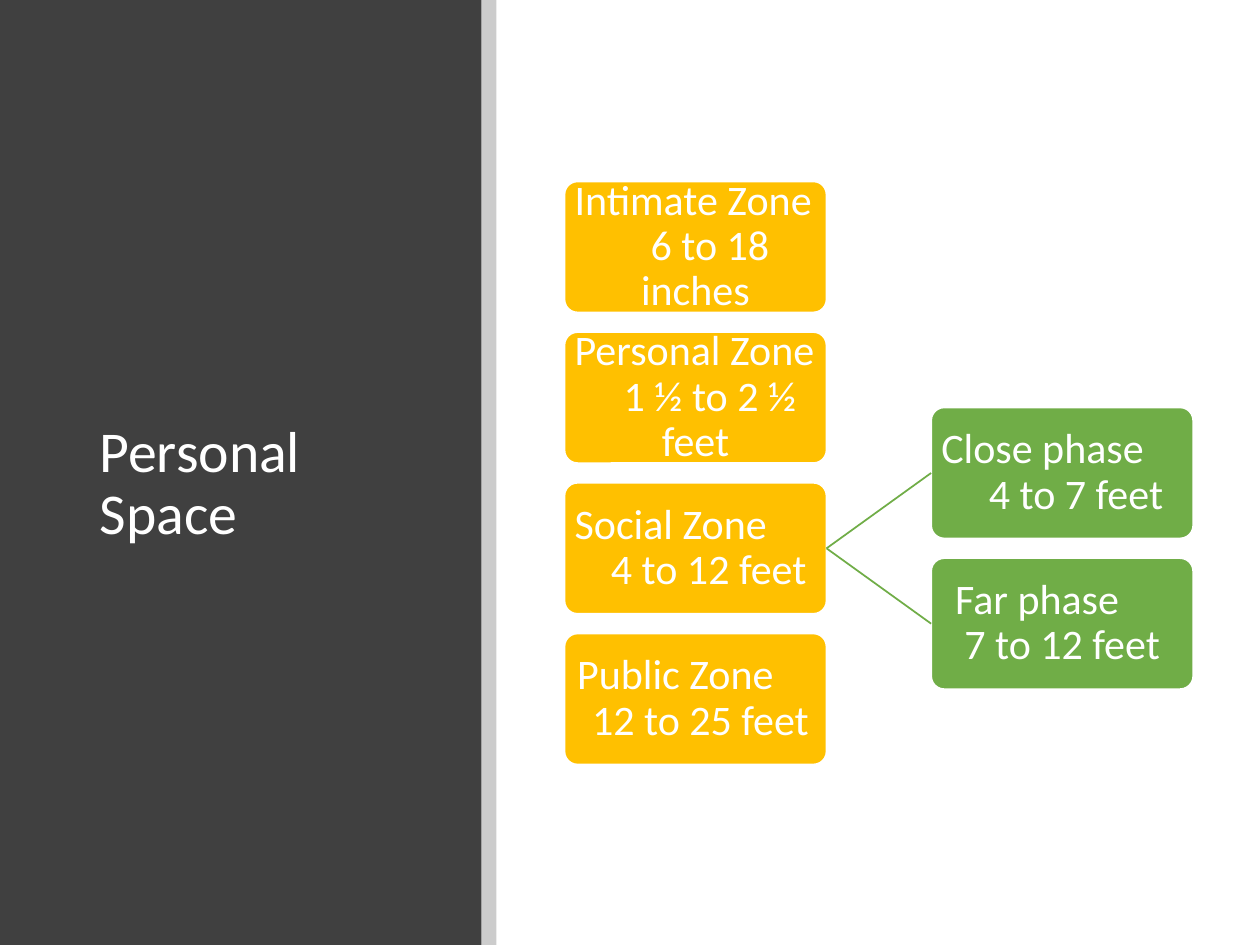
"""Build the Personal Space slide with its four zones and the two social phases."""
import dataclasses

import pptx
import pptx.dml.color
import pptx.enum.shapes
import pptx.enum.text
import pptx.oxml
import pptx.oxml.ns
import pptx.util
from pptx.util import Inches

FONT = "Calibri"
WHITE, GOLD, GREEN, CHARCOAL = "FFFFFF", "FFC000", "70AD47", "404040"
ZONE_LEFT, PHASE_LEFT, FIRST_TOP = 4.48, 7.39, 1.44
BOX_WIDTH, BOX_HEIGHT = 2.08, 1.04
ROW_PITCH = BOX_HEIGHT * 1.15
RIGHT_SIDE, LEFT_SIDE = 3, 1


@dataclasses.dataclass(frozen=True)
class Distance:
    name: str
    span: str
    row: float
    name_indent: float
    span_indent: float


ZONES = [
    Distance("Intimate Zone", "6 to 18 inches", 0, 0, 0.23),
    Distance("Personal Zone", "1 ½ to 2 ½ feet", 1, 0, 0.23),
    Distance("Social Zone", "4 to 12 feet", 2, 0, 0.21),
    Distance("Public Zone", "12 to 25 feet", 3, 0.02, 0.08),
]
PHASES = [
    Distance("Close phase", "4 to 7 feet", 1.5, 0, 0.22),
    Distance("Far phase", "7 to 12 feet", 2.5, 0.11, 0),
]


def rgb(color: str) -> pptx.dml.color.RGBColor:
    return pptx.dml.color.RGBColor.from_string(color)


def format_paragraph(paragraph, size: float, align, indent: float = 0) -> None:
    paragraph.alignment = align
    paragraph.line_spacing = 0.9
    paragraph.space_before = paragraph.space_after = pptx.util.Pt(0)
    properties = paragraph._p.get_or_add_pPr()
    properties.set("marL", "0")
    properties.set("indent", str(Inches(indent)))
    for run in paragraph.runs:
        run.font.name = FONT
        run.font.size = pptx.util.Pt(size)
        run.font.color.rgb = rgb(WHITE)


def add_panel(slide, left: float, width: float, color: str):
    panel = slide.shapes.add_shape(
        pptx.enum.shapes.MSO_SHAPE.RECTANGLE, Inches(left), 0, Inches(width), Inches(7.5))
    panel.shadow.inherit = False
    panel.fill.solid()
    panel.fill.fore_color.rgb = rgb(color)
    panel.line.fill.background()
    return panel


def set_opacity(shape, percent: int) -> None:
    color = shape.fill._xPr.find(".//" + pptx.oxml.ns.qn("a:srgbClr"))
    alpha = pptx.oxml.parse_xml(
        f'<a:alpha {pptx.oxml.ns.nsdecls("a")} val="{percent * 1000}"/>')
    color.append(alpha)


def add_title(slide, text: str):
    title = slide.shapes.title
    title.left, title.top = Inches(0.69), Inches(0.89)
    title.width, title.height = Inches(2.74), Inches(5.91)
    frame = title.text_frame
    frame.text = text
    frame.word_wrap = True
    frame.auto_size = pptx.enum.text.MSO_AUTO_SIZE.NONE
    frame.vertical_anchor = pptx.enum.text.MSO_ANCHOR.MIDDLE
    format_paragraph(frame.paragraphs[0], 33, pptx.enum.text.PP_ALIGN.LEFT)
    return title


def add_distance(slide, distance: Distance, left: float, color: str):
    box = slide.shapes.add_shape(
        pptx.enum.shapes.MSO_SHAPE.ROUNDED_RECTANGLE,
        Inches(left), Inches(FIRST_TOP + distance.row * ROW_PITCH),
        Inches(BOX_WIDTH), Inches(BOX_HEIGHT))
    box.adjustments[0] = 0.1
    box.shadow.inherit = False
    box.fill.solid()
    box.fill.fore_color.rgb = rgb(color)
    box.line.color.rgb = rgb(WHITE)
    box.line.width = pptx.util.Pt(1)
    frame = box.text_frame
    frame.text = f"{distance.name}\n{distance.span}"
    frame.word_wrap = True
    frame.vertical_anchor = pptx.enum.text.MSO_ANCHOR.MIDDLE
    frame.margin_left = frame.margin_right = Inches(0.05)
    frame.margin_top = frame.margin_bottom = Inches(0.05)
    name, span = frame.paragraphs
    format_paragraph(name, 24, pptx.enum.text.PP_ALIGN.LEFT, distance.name_indent)
    format_paragraph(span, 24, pptx.enum.text.PP_ALIGN.CENTER, distance.span_indent)
    return box


def join(slide, zone, phase) -> None:
    branch = slide.shapes.add_connector(pptx.enum.shapes.MSO_CONNECTOR.STRAIGHT, 0, 0, 0, 0)
    branch.begin_connect(zone, RIGHT_SIDE)
    branch.end_connect(phase, LEFT_SIDE)
    branch.line.color.rgb = rgb(GREEN)
    branch.line.width = pptx.util.Pt(1)
    branch._element.spPr.append(
        pptx.oxml.parse_xml(f'<a:effectLst {pptx.oxml.ns.nsdecls("a")}/>'))


def main() -> None:
    deck = pptx.Presentation()
    deck.slide_width, deck.slide_height = Inches(10), Inches(7.5)
    slide = deck.slides.add_slide(deck.slide_layouts[5])

    title = add_title(slide, "Personal Space")
    side_panel = add_panel(slide, 0, 3.82, CHARCOAL)
    title.element.addprevious(side_panel.element)
    set_opacity(add_panel(slide, 3.82, 0.12, "000000"), 20)

    zones = {zone.name: add_distance(slide, zone, ZONE_LEFT, GOLD) for zone in ZONES}
    for phase in PHASES:
        join(slide, zones["Social Zone"], add_distance(slide, phase, PHASE_LEFT, GREEN))

    deck.save("out.pptx")


if __name__ == "__main__":
    main()
